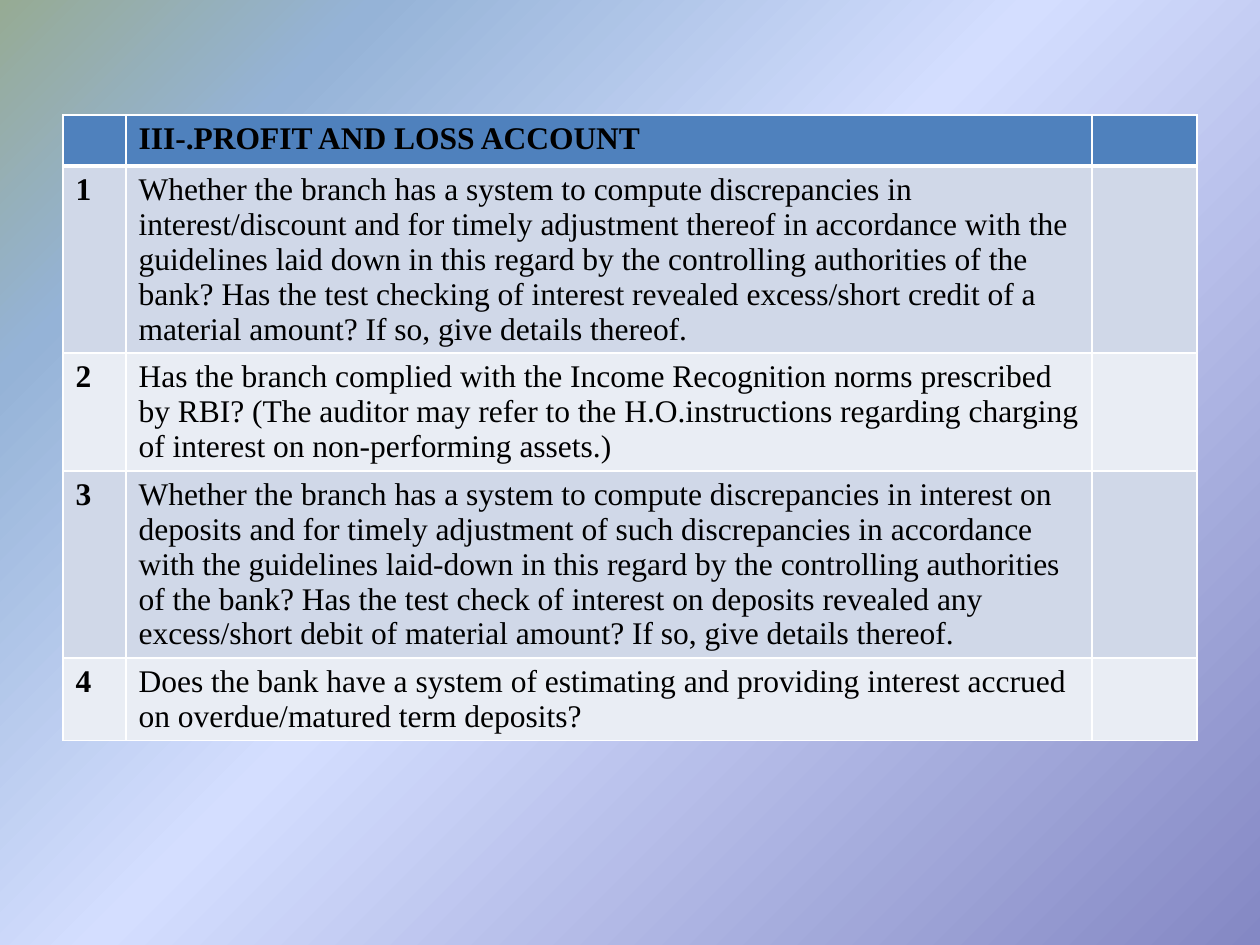
from dataclasses import dataclass

from lxml.etree import SubElement
from pptx import Presentation
from pptx.dml.color import RGBColor
from pptx.oxml.ns import qn
from pptx.util import Pt

EMU_PER_PX = 914400 / 126


@dataclass(frozen=True)
class Theme:
    font: str = "Times New Roman"
    size: int = 18
    text: str = "000000"
    header: str = "4F81BD"
    bands: tuple = ("D0D8E8", "E9EDF4")
    border: str = "FFFFFF"
    backdrop: tuple = ((0, "8488C4"), (53, "D4DEFF"), (83, "95B3D7"), (100, "96AB94"))


theme = Theme()


def px(length):
    return round(length * EMU_PER_PX)


def add_border(cell, side, width):
    """Draw one side (L, R, T or B) of a cell; width is in points."""
    line = SubElement(cell._tc.get_or_add_tcPr(), qn(f"a:ln{side}"), w=str(Pt(width)))
    fill = SubElement(line, qn("a:solidFill"))
    SubElement(fill, qn("a:srgbClr"), val=theme.border)


deck = Presentation()
deck.slide_width, deck.slide_height = px(1260), px(945)
page = deck.slides.add_slide(deck.slide_layouts[6])

# Background: a gradient spreading from the bottom right corner
backdrop = page.background.fill
backdrop.gradient()
gradient = page._element.cSld.bg.bgPr.find(qn("a:gradFill"))
for child in list(gradient):
    gradient.remove(child)
stops = SubElement(gradient, qn("a:gsLst"))
for percent, color in theme.backdrop:
    stop = SubElement(stops, qn("a:gs"), pos=str(percent * 1000))
    SubElement(stop, qn("a:srgbClr"), val=color)
spread = SubElement(gradient, qn("a:path"), {"path": "circle"})
SubElement(spread, qn("a:fillToRect"), l="100000", t="100000")

# Questions on the profit and loss account
rows = [
    ("", "III-.PROFIT AND LOSS ACCOUNT", ""),
    ("1", "Whether the branch has a system to compute discrepancies in interest/discount "
          "and for timely adjustment thereof in accordance with the guidelines laid down in "
          "this regard by the controlling authorities of the bank? Has the test checking of "
          "interest revealed excess/short credit of a material amount? If so, give details "
          "thereof.", ""),
    ("2", "Has the branch complied with the Income Recognition norms prescribed by RBI? "
          "(The auditor may refer to the H.O.instructions regarding charging of interest on "
          "non-performing assets.)", ""),
    ("3", "Whether the branch has a system to compute discrepancies in interest on deposits "
          "and for timely adjustment of such discrepancies in accordance with the guidelines "
          "laid-down in this regard by the controlling authorities of the bank? Has the test "
          "check of interest on deposits revealed any excess/short debit of material amount? "
          "If so, give details thereof.", ""),
    ("4", "Does the bank have a system of estimating and providing interest accrued on "
          "overdue/matured term deposits?", ""),
]
column_widths = [63, 966, 105]
row_heights = [51, 187, 118, 187, 82]

table = page.shapes.add_table(
    len(rows), len(column_widths), px(63), px(115),
    px(sum(column_widths)), px(sum(row_heights))).table
for column, width in zip(table.columns, column_widths):
    column.width = px(width)

for row_index, texts in enumerate(rows):
    is_header = row_index == 0
    table.rows[row_index].height = px(row_heights[row_index])
    for column_index, text in enumerate(texts):
        cell = table.cell(row_index, column_index)
        for side in "LRTB":
            below_header = (is_header and side == "B") or (row_index == 1 and side == "T")
            add_border(cell, side, 3 if below_header else 1)
        cell.fill.solid()
        color = theme.header if is_header else theme.bands[(row_index - 1) % 2]
        cell.fill.fore_color.rgb = RGBColor.from_string(color)
        if text:
            span = cell.text_frame.paragraphs[0].add_run()
            span.text = text
            span.font.name = theme.font
            span.font.size = Pt(theme.size)
            span.font.bold = is_header or column_index == 0
            span.font.color.rgb = RGBColor.from_string(theme.text)

deck.save("out.pptx")
